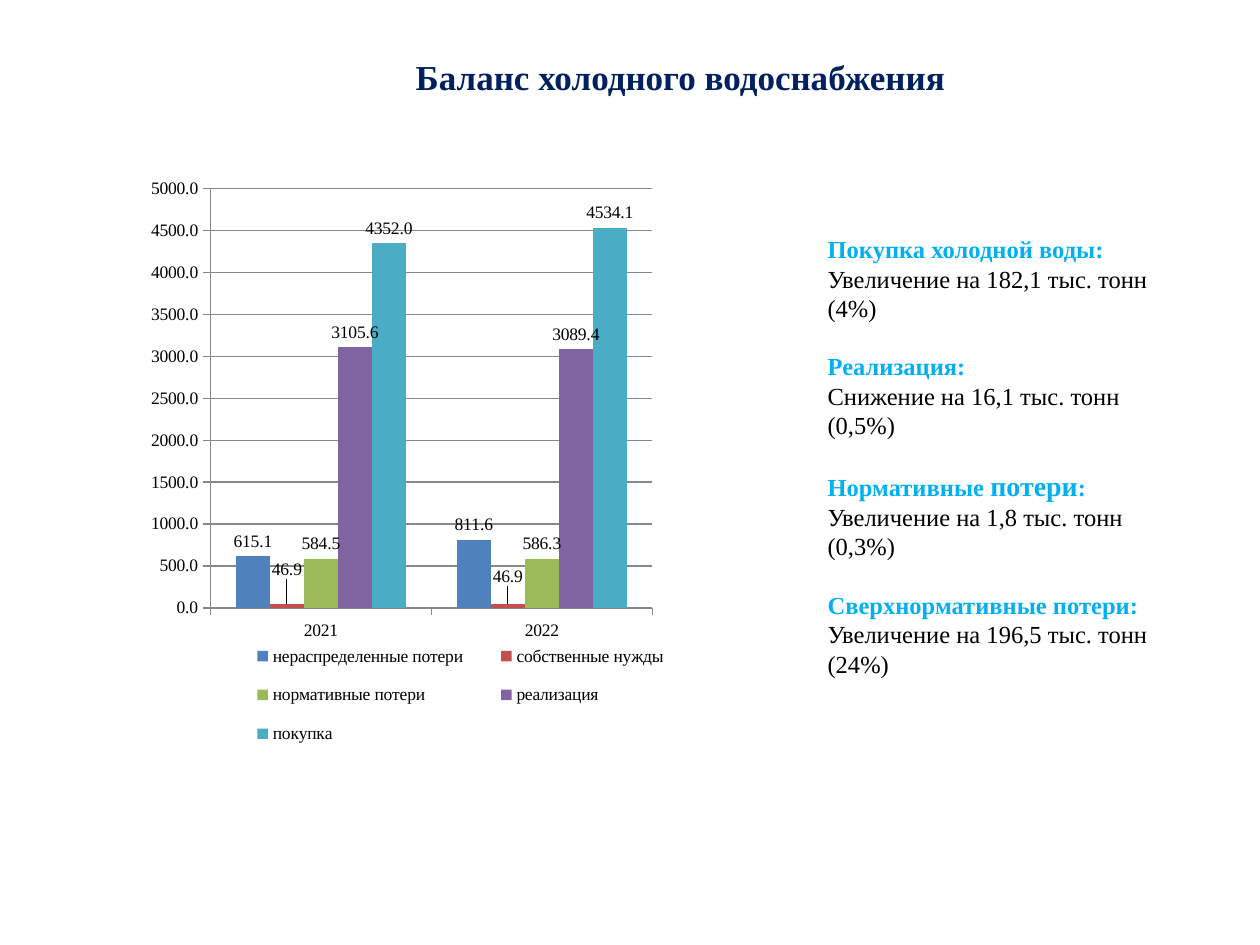
from lxml import etree
from pptx import Presentation
from pptx.chart.data import CategoryChartData
from pptx.dml.color import RGBColor
from pptx.enum.chart import XL_CHART_TYPE, XL_LABEL_POSITION, XL_LEGEND_POSITION, XL_TICK_MARK
from pptx.enum.text import MSO_ANCHOR, PP_ALIGN
from pptx.oxml.ns import qn
from pptx.util import Inches, Pt

NAVY = RGBColor(0x00, 0x20, 0x60)
CYAN = RGBColor(0x00, 0xB0, 0xF0)
BLACK = RGBColor(0x00, 0x00, 0x00)
GRAY = RGBColor(0x87, 0x87, 0x87)
BLUE = RGBColor(0x4F, 0x81, 0xBD)
RED = RGBColor(0xC0, 0x50, 0x4D)
GREEN = RGBColor(0x9B, 0xBB, 0x59)
PURPLE = RGBColor(0x80, 0x64, 0xA2)
TEAL = RGBColor(0x4B, 0xAC, 0xC6)
FONT = "Times New Roman"
COLUMN = XL_CHART_TYPE.COLUMN_CLUSTERED
RIGHT = XL_LEGEND_POSITION.RIGHT
OUTER = XL_LABEL_POSITION.OUTSIDE_END
TICK = XL_TICK_MARK.OUTSIDE
CENTER = PP_ALIGN.CENTER
MIDDLE = MSO_ANCHOR.MIDDLE


def style(font, size, color, bold=False):
    font.name, font.size, font.bold = FONT, Pt(size), bold
    font.color.rgb = color


def place(node, **parts):
    """Put a manual layout right after the given chart node."""
    layout = etree.Element(qn("c:layout"))
    manual = etree.SubElement(layout, qn("c:manualLayout"))
    for tag, val in parts.items():
        etree.SubElement(manual, qn("c:" + tag)).set("val", str(val))
    node.addnext(layout)


deck = Presentation()
deck.slide_width, deck.slide_height = Inches(10), Inches(7.5)
slide = deck.slides.add_slide(deck.slide_layouts[5])

title = slide.shapes.title
title.left, title.top = Inches(1.54), Inches(0.29)
title.width, title.height = Inches(7.72), Inches(0.64)
frame = title.text_frame
frame.text = "Баланс холодного водоснабжения"
frame.vertical_anchor = MIDDLE
frame.paragraphs[0].alignment = CENTER
style(frame.paragraphs[0].runs[0].font, 20, NAVY, True)

# Water balance chart
rows = [
    ("нераспределенные потери", (615.1, 811.6), BLUE),
    ("собственные нужды", (46.9, 46.9), RED),
    ("нормативные потери", (584.5, 586.3), GREEN),
    ("реализация", (3105.6, 3089.4), PURPLE),
    ("покупка", (4352.0, 4534.1), TEAL),
]
data = CategoryChartData(number_format="0.0")
data.categories = ["2021", "2022"]
for name, vals, color in rows:
    data.add_series(name, vals)
chart = slide.shapes.add_chart(
    COLUMN, Inches(0.75), Inches(1.19), Inches(5.75), Inches(5.12), data).chart
style(chart.font, 10, BLACK)
chart.has_title = False

plot = chart.plots[0]
plot.gap_width, plot.overlap = 150, 0
plot.vary_by_categories = False
for series, (name, vals, color) in zip(plot.series, rows):
    series.format.fill.solid()
    series.format.fill.fore_color.rgb = color
    labels = series.data_labels
    labels.show_value = True
    labels.number_format, labels.number_format_is_linked = "0.0", False
    labels.position = OUTER
    style(labels.font, 10, BLACK)

# Lift the labels of the lowest bars clear of the axis
needs = plot.series[1]
for num, lift in enumerate((-0.03, -0.02)):
    needs.points[num].data_label.position = OUTER
    mark = needs.data_labels._element.findall(qn("c:dLbl"))[num]
    place(mark.find(qn("c:idx")), x=0, y=lift)

scale = chart.value_axis
scale.minimum_scale, scale.maximum_scale, scale.major_unit = 0, 5000, 500
scale.tick_labels.number_format = "0.0"
scale.tick_labels.number_format_is_linked = False
scale.has_major_gridlines = True
scale.major_gridlines.format.line.color.rgb = GRAY
for axis in (scale, chart.category_axis):
    axis.major_tick_mark = TICK
    axis.format.line.color.rgb = GRAY

chart.has_legend = True
legend = chart.legend
legend.position = RIGHT
legend.include_in_layout = False
style(legend.font, 10, BLACK)
for old in legend._element.findall(qn("c:layout")):
    legend._element.remove(old)
place(legend._element.find(qn("c:legendPos")),
      xMode="edge", yMode="edge", x=0.18, y=0.74, w=0.65, h=0.21)

area = plot._element.getparent()
for old in area.findall(qn("c:layout")):
    area.remove(old)
head = etree.Element(qn("c:layout"))
area.insert(0, head)
place(head, layoutTarget="inner", xMode="edge", yMode="edge",
      x=0.16, y=0.06, w=0.61, h=0.65)
area.remove(head)

# Changes over the year
notes = [
    (["Покупка холодной воды:"], "Увеличение на 182,1 тыс. тонн (4%)"),
    (["Реализация:"], "Снижение на 16,1 тыс. тонн (0,5%)"),
    (["Нормативные ", "потери", ":"], "Увеличение на 1,8 тыс. тонн (0,3%)"),
    (["Сверхнормативные потери:"], "Увеличение на 196,5 тыс. тонн (24%)"),
]
box = slide.shapes.add_textbox(Inches(6.47), Inches(1.81), Inches(2.76), Inches(3.87))
frame = box.text_frame
frame.word_wrap = True
for num, (heads, text) in enumerate(notes):
    para = frame.add_paragraph() if num else frame.paragraphs[0]
    if num:
        para.space_before = Pt(16.5)
    for part in heads:
        run = para.add_run()
        run.text = part
        style(run.font, 16 if part == "потери" else 14, CYAN, True)
    para = frame.add_paragraph()
    para.text = text
    style(para.runs[0].font, 14, BLACK)

deck.save("out.pptx")
